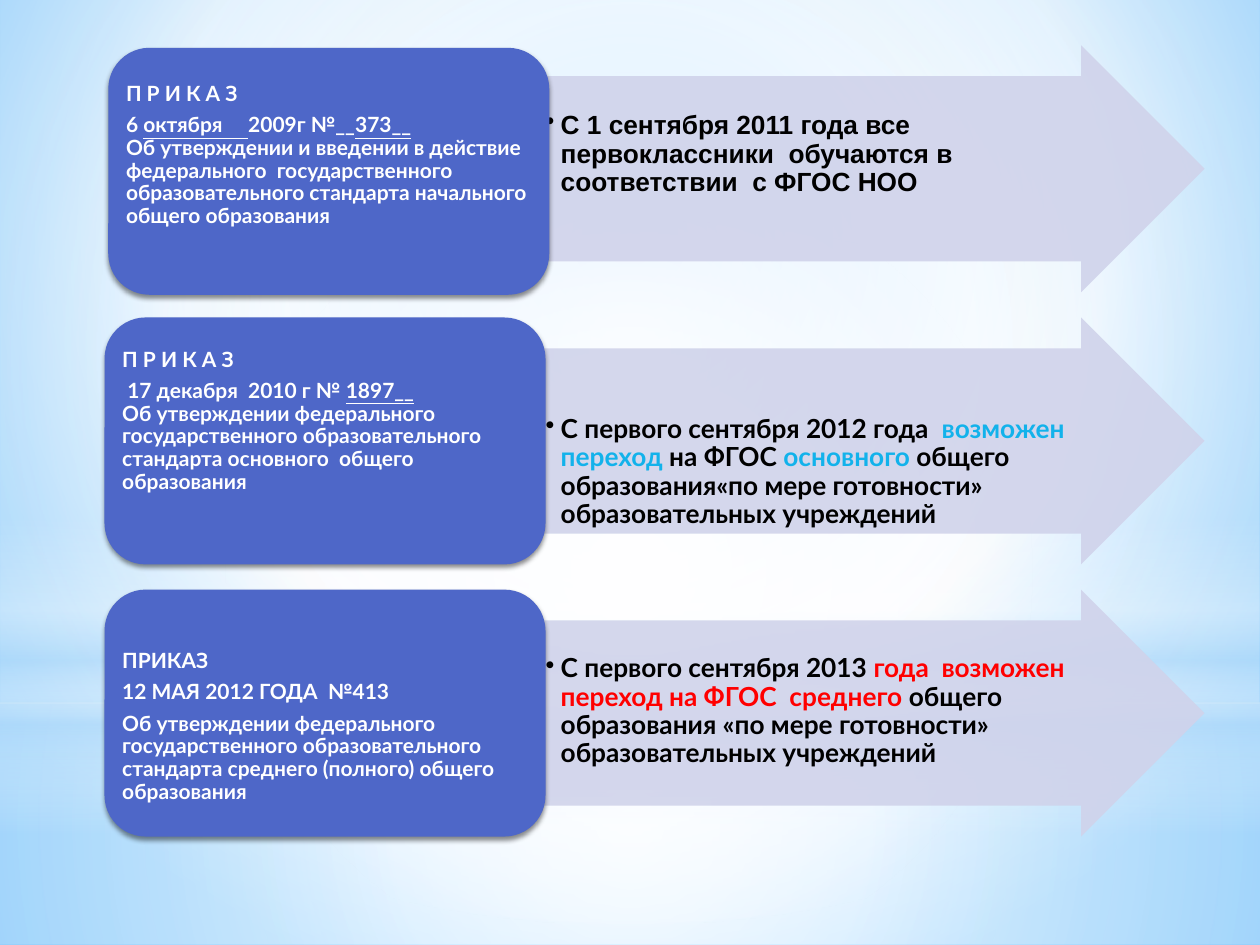
from lxml import etree
from pptx import Presentation
from pptx.dml.color import RGBColor as RGB
from pptx.enum.shapes import MSO_SHAPE as Kind
from pptx.oxml import parse_xml
from pptx.oxml.ns import qn
from pptx.util import Inches, Pt

NS = 'xmlns:a="http://schemas.openxmlformats.org/drawingml/2006/main"'
BLUE = RGB(0x4E, 0x67, 0xC8)
PALE = RGB(0xD0, 0xD3, 0xEB)
WHITE = RGB(0xFF, 0xFF, 0xFF)
BLACK = RGB(0, 0, 0)
CYAN = RGB(0x12, 0xB2, 0xEB)
RED = RGB(0xFF, 0, 0)
SNOW, SKY = "FFFFFF", "B4DCFA"


def blend(stops, focus=None):
    """Gradient fill: stops of (place, colour, opacity), radial if focus is given."""
    marks = "".join(
        f'<a:gs pos="{pos * 1000}"><a:srgbClr val="{tone}">'
        f'<a:alpha val="{alpha * 1000}"/></a:srgbClr></a:gs>'
        for pos, tone, alpha in stops)
    way = '<a:lin ang="5400000" scaled="0"/>'
    if focus:
        sides = " ".join(f'{s}="{v * 1000}"' for s, v in zip("ltrb", focus))
        way = f'<a:path path="circle"><a:fillToRect {sides}/></a:path>'
    return parse_xml(f'<a:gradFill {NS} rotWithShape="1"><a:gsLst>{marks}</a:gsLst>{way}</a:gradFill>')


def write(paras, box, top, side, size, color, font="Lato", after=0, bullet=False):
    """Text box; each paragraph is a list of strings or (string, format) pairs."""
    frame = slide.shapes.add_textbox(*map(Inches, box)).text_frame
    frame.word_wrap = True
    frame.margin_left = frame.margin_right = Inches(side)
    frame.margin_top, frame.margin_bottom = Inches(top), 0
    for i, parts in enumerate(paras):
        para = frame.add_paragraph() if i else frame.paragraphs[0]
        para.line_spacing, para.space_after = 0.9, Pt(after)
        if bullet:
            props = para._p.get_or_add_pPr()
            props.set("marL", str(Inches(0.12)))
            props.set("indent", str(-Inches(0.12)))
            etree.SubElement(props, qn("a:buChar")).set("char", "•")
        for part in parts:
            words, look = part if isinstance(part, tuple) else (part, {})
            for n, line in enumerate(words.split("\n")):
                if n:
                    para.add_line_break()
                if line:
                    run = para.add_run()
                    run.text = line
                    run.font.name, run.font.size, run.font.bold = font, Pt(size), True
                    run.font.color.rgb = look.get("color", color)
                    run.font.underline = look.get("line", False)


deck = Presentation()
deck.slide_width, deck.slide_height = Inches(10), Inches(7.5)
slide = deck.slides.add_slide(deck.slide_layouts[6])

# Background glow
back = slide.background.fill
back.solid()
old = slide._element.find(".//" + qn("a:solidFill"))
old.getparent().replace(old, blend(
    [(0, "9ED5FF", 100), (60, SNOW, 100), (100, "5BB9FF", 100)], (20, 10, 20, 60)))

# Soft light layers: kind, top, height, stops, focus
MID = (50, 50, 50, 50)
layers = [
    (Kind.RECTANGLE, 5.58, 1.92, [(0, SNOW, 91), (37, SNOW, 76), (100, SKY, 79)], MID),
    (Kind.RECTANGLE, 0, 5.58, [(0, SNOW, 89), (48, SNOW, 62), (100, SKY, 79)], MID),
    (Kind.RECTANGLE, 4.12, 2.5, [(0, SNOW, 0), (29, SNOW, 30), (45, SKY, 40),
                                 (55, SNOW, 26), (65, SKY, 60), (100, SNOW, 0)], None),
    (Kind.OVAL, 1.75, 5.58, [(0, SNOW, 100), (56, SNOW, 0)], MID),
]
for kind, top, high, stops, focus in layers:
    layer = slide.shapes.add_shape(kind, 0, Inches(top), deck.slide_width, Inches(high))
    layer.shadow.inherit = False
    layer.line.fill.background()
    layer.fill.solid()
    old = layer._element.spPr.find(qn("a:solidFill"))
    old.getparent().replace(old, blend(stops, focus))

# Rows: card left, card shift, order text and its drop, arrow text, its drop and font
LINE = {"line": True}
rows = [
    (0.86, 0.02,
     [["П Р И К А З"],
      ["6 ", ("октября     ", LINE), "2009г №__", ("373__", LINE),
       "\nОб утверждении и введении в действие федерального  государственного "
       "образовательного стандарта начального общего образования"]], 0.19,
     ["С 1 сентября 2011 года все первоклассники  обучаются в соответствии  с ФГОС НОО"],
     0.28, "Arial"),
    (0.83, 0,
     [["П Р И К А З"],
      [" 17 декабря  2010 г № ", ("1897__", LINE),
       "\nОб утверждении федерального \nгосударственного образовательного "
       "стандарта основного  общего образования"]], 0.16,
     ["С первого сентября 2012 года  ", ("возможен переход ", {"color": CYAN}), "на ФГОС ",
      ("основного", {"color": CYAN}),
      " общего образования«по мере готовности» образовательных учреждений"],
     0.53, "Lato"),
    (0.83, 0,
     [["ПРИКАЗ"], ["12 МАЯ 2012 ГОДА  №413"],
      ["Об утверждении федерального государственного образовательного "
       "стандарта среднего (полного) общего образования"]], 0.39,
     ["С первого сентября 2013 ",
      ("года  возможен переход на ФГОС  среднего ", {"color": RED}),
      "общего образования «по мере готовности» образовательных учреждений"],
     0.27, "Lato"),
]
FIRST, PITCH, HIGH = 0.36, 2.16, 1.96
for i, (left, shift, order, drop, note, fall, font) in enumerate(rows):
    top = FIRST + i * PITCH

    # Arrow and its text
    arrow = slide.shapes.add_shape(Kind.RIGHT_ARROW, *map(Inches, (4.32, top, 5.24, HIGH)))
    arrow.adjustments[0], arrow.adjustments[1] = 0.75, 0.5
    arrow.shadow.inherit = False
    arrow.line.fill.background()
    arrow.fill.solid()
    arrow.fill.fore_color.rgb = PALE
    tone = arrow._element.spPr.find(".//" + qn("a:srgbClr"))
    etree.SubElement(tone, qn("a:alpha")).set("val", "90000")
    write([note], (4.32, top + 0.25, 4.51, 1.47), fall, 0.01, 15, BLACK,
          font=font, after=2, bullet=True)

    # Card with a soft shadow and its text
    card = slide.shapes.add_shape(Kind.ROUNDED_RECTANGLE, *map(Inches, (left, top + shift, 3.5, HIGH)))
    card.shadow.inherit = False
    card.line.fill.background()
    card.fill.solid()
    card.fill.fore_color.rgb = BLUE
    card._element.spPr.find(qn("a:effectLst")).append(parse_xml(
        f'<a:outerShdw {NS} blurRad="{Pt(3.1)}" dist="{Pt(1.8)}" dir="5400000" rotWithShape="0">'
        '<a:srgbClr val="000000"><a:alpha val="45000"/></a:srgbClr></a:outerShdw>'))
    write(order, (left + 0.09, top + shift + 0.09, 3.31, 1.77), drop, 0.05, 12, WHITE, after=5)

deck.save("out.pptx")
